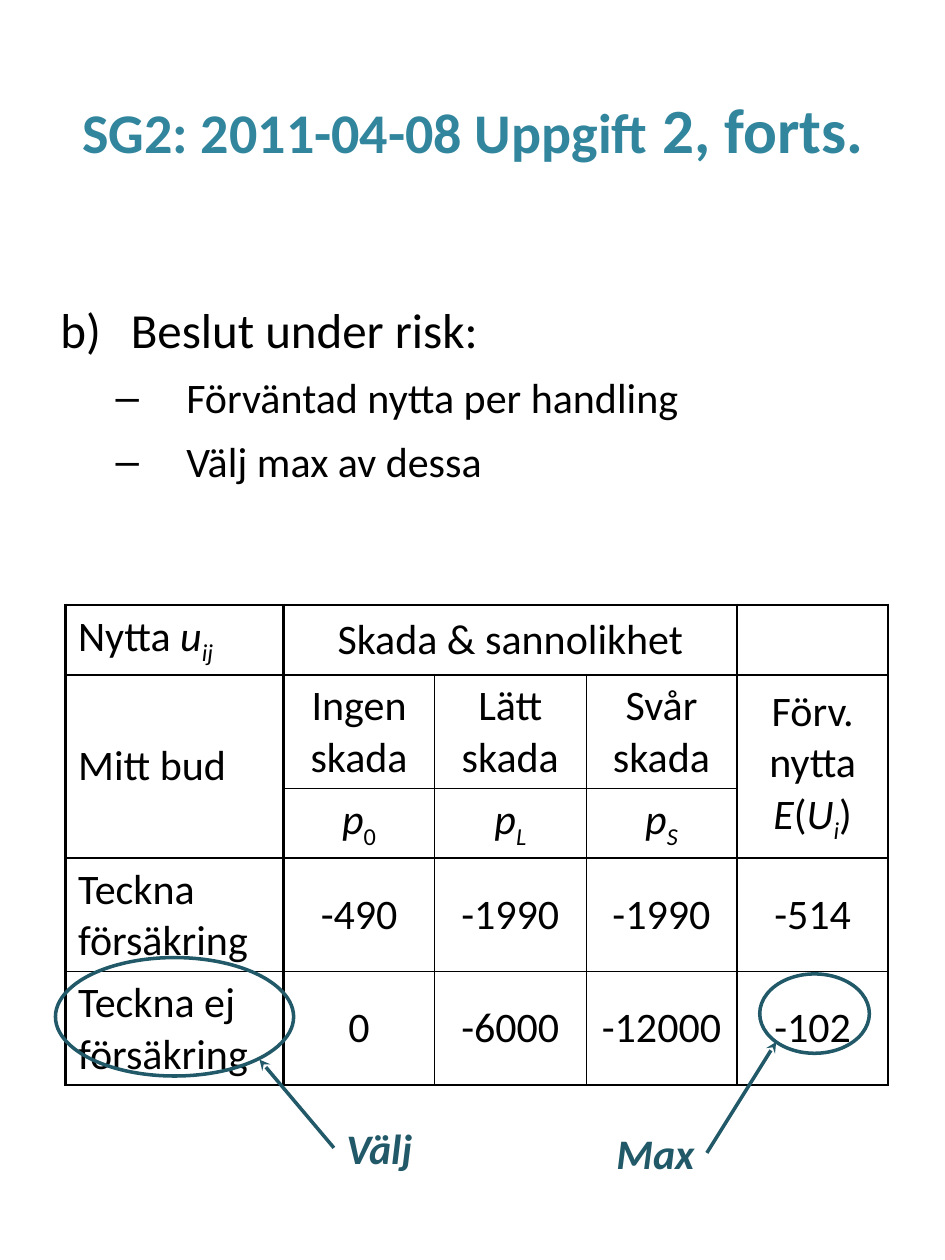
from lxml.etree import SubElement
from pptx import Presentation
from pptx.dml.color import RGBColor
from pptx.enum.shapes import MSO_CONNECTOR, MSO_SHAPE
from pptx.enum.text import MSO_ANCHOR, PP_ALIGN
from pptx.oxml import parse_xml
from pptx.oxml.ns import nsdecls, qn
from pptx.util import Inches, Pt

COLORS = {"title": "31859C", "text": "000000", "accent": "215968"}
FONT = "Calibri"
PLAIN, ITALIC, SUB, ITALIC_SUB = "", "i", "s", "is"

HEADER_ROWS = [
    [[("Nytta ", PLAIN), ("u", ITALIC), ("ij", ITALIC_SUB)],
     [("Skada & sannolikhet", PLAIN)], [], [], []],
    [[("Mitt bud", PLAIN)], [("Ingen skada", PLAIN)], [("Lätt skada", PLAIN)],
     [("Svår skada", PLAIN)],
     [("Förv. nytta ", PLAIN), ("E", ITALIC), ("(", PLAIN), ("U", ITALIC),
      ("i", ITALIC_SUB), (")", PLAIN)]],
    [[], [("p", ITALIC), ("0", SUB)], [("p", ITALIC), ("L", ITALIC_SUB)],
     [("p", ITALIC), ("S", ITALIC_SUB)], []],
]
UTILITIES = [
    ["Teckna försäkring", "-490", "-1990", "-1990", "-514"],
    ["Teckna ej försäkring", "0", "-6000", "-12000", "-102"],
]
MERGES = [((0, 1), (0, 3)), ((1, 0), (2, 0)), ((1, 4), (2, 4))]
THIN_COLUMN_EDGES = {2, 3}
THIN_ROW_EDGES = {2, 4}


def inches(box):
    """Turn a box of plain numbers into lengths."""
    return [Inches(value) for value in box]


def style_run(span, size, color, bold=False, italic=False):
    """Set the font of one run."""
    font = span.font
    font.name, font.size = FONT, Pt(size)
    font.bold, font.italic = bold, italic
    font.color.rgb = RGBColor.from_string(COLORS[color])


def add_title(page, box):
    """Place the title with its larger ending."""
    title = page.shapes.title
    title.left, title.top, title.width, title.height = inches(box)
    title.text_frame.vertical_anchor = MSO_ANCHOR.MIDDLE
    para = title.text_frame.paragraphs[0]
    para.alignment = PP_ALIGN.CENTER
    for text, size in [("SG2: 2011-04-08 Uppgift", 32), (" 2, forts.", 36)]:
        span = para.add_run()
        span.text = text
        style_run(span, size, "title", bold=True)


def add_body(page, box):
    """Place the lettered point and its dashed subpoints."""
    frame = page.shapes.add_textbox(*inches(box)).text_frame
    frame.word_wrap = True
    points = ["Beslut under risk:", "Förväntad nytta per handling", "Välj max av dessa"]
    frame.text = "\n".join(points)
    for index, para in enumerate(frame.paragraphs):
        para.level = min(index, 1)
        para.space_before = Pt(7.6)
        style_run(para.runs[0], 24 if para.level else 28, "text")
        properties = para._p.get_or_add_pPr()
        properties.set("marL", str(Inches(1 if para.level else 0.56)))
        properties.set("indent", str(Inches(-0.56)))
        if para.level:
            SubElement(properties, qn("a:buFont"), typeface="Arial")
            SubElement(properties, qn("a:buChar"), char="–")
        else:
            SubElement(properties, qn("a:buAutoNum"), type="alphaLcParenR", startAt="2")


def set_borders(cell, row, column):
    """Draw thin lines inside the value grid and thick ones around its groups."""
    right = column + (cell.span_width if cell.is_merge_origin else 1)
    bottom = row + (cell.span_height if cell.is_merge_origin else 1)
    edges = [("lnL", column in THIN_COLUMN_EDGES), ("lnR", right in THIN_COLUMN_EDGES),
             ("lnT", row in THIN_ROW_EDGES), ("lnB", bottom in THIN_ROW_EDGES)]
    properties = cell._tc.get_or_add_tcPr()
    for position, (tag, thin) in enumerate(edges):
        properties.insert(position, parse_xml(
            f'<a:{tag} {nsdecls("a")} w="{Pt(0.5 if thin else 1.5)}"><a:solidFill>'
            f'<a:srgbClr val="{COLORS["text"]}"/></a:solidFill></a:{tag}>'))


def fill_cell(cell, parts, centered):
    """Write the runs of one cell."""
    cell.fill.background()
    cell.vertical_anchor = MSO_ANCHOR.MIDDLE
    para = cell.text_frame.paragraphs[0]
    para.alignment = PP_ALIGN.CENTER if centered else PP_ALIGN.LEFT
    para.font.size = Pt(24)
    for text, style in parts:
        span = para.add_run()
        span.text = text
        style_run(span, 24, "text", italic="i" in style)
        if "s" in style:
            span.font._element.set("baseline", "-25000")


def add_utility_table(page, box):
    """Place the table of utilities, probabilities and expected values."""
    rows = HEADER_ROWS + [[[(text, PLAIN)] for text in row] for row in UTILITIES]
    table = page.shapes.add_table(len(rows), len(rows[0]), *inches(box)).table
    table.first_row = table.horz_banding = False
    for column, width in zip(table.columns, [1.73] + [1.2] * 4):
        column.width = Inches(width)
    for first, last in MERGES:
        table.cell(*first).merge(table.cell(*last))
    for row, contents in enumerate(rows):
        table.rows[row].height = Inches(0.5)
        for column, parts in enumerate(contents):
            cell = table.cell(row, column)
            fill_cell(cell, parts, column > 0)
            if row == 3 and 1 <= column <= 3:
                cell.margin_left = cell.margin_right = cell.margin_top = Inches(0.01)
                cell.margin_bottom = 0
            if not cell.is_spanned:
                set_borders(cell, row, column)


def style_line(line):
    """Give an outline the accent colour."""
    line.color.rgb = RGBColor.from_string(COLORS["accent"])
    line.width = Pt(2)


def add_callout(page, ring_box, label_box, text, alignment, tip, end):
    """Place a ring, its label and the arrow between them."""
    ring = page.shapes.add_shape(MSO_SHAPE.OVAL, *inches(ring_box))
    ring.shadow.inherit = False
    ring.fill.background()
    style_line(ring.line)

    label = page.shapes.add_textbox(*inches(label_box)).text_frame
    label.word_wrap = True
    label.text = text
    label.paragraphs[0].alignment = alignment
    style_run(label.paragraphs[0].runs[0], 24, "accent", bold=True, italic=True)

    arrow = page.shapes.add_connector(MSO_CONNECTOR.STRAIGHT, *inches(tip + end))
    style_line(arrow.line)
    SubElement(arrow.line._get_or_add_ln(), qn("a:headEnd"), type="stealth")
    SubElement(arrow._element.spPr, qn("a:effectLst"))


def main():
    """Build the slide and save the deck."""
    deck = Presentation()
    deck.slide_width, deck.slide_height = Inches(7.5), Inches(10)
    page = deck.slides.add_slide(deck.slide_layouts[5])
    add_title(page, (0.38, 0.4, 6.75, 1.24))
    add_body(page, (0.38, 2.33, 6.92, 1.8))
    add_utility_table(page, (0.52, 4.8, 6.53, 2.5))
    add_callout(page, (0.44, 7.6, 1.89, 0.94), (2.65, 8.86, 1.02, 0.5), "Välj",
                PP_ALIGN.LEFT, (2.06, 8.41), (2.65, 9.11))
    add_callout(page, (6.03, 7.73, 0.87, 0.63), (4.54, 8.9, 1.07, 0.5), "Max",
                PP_ALIGN.RIGHT, (6.16, 8.27), (5.61, 9.15))
    deck.save("out.pptx")


if __name__ == "__main__":
    main()
